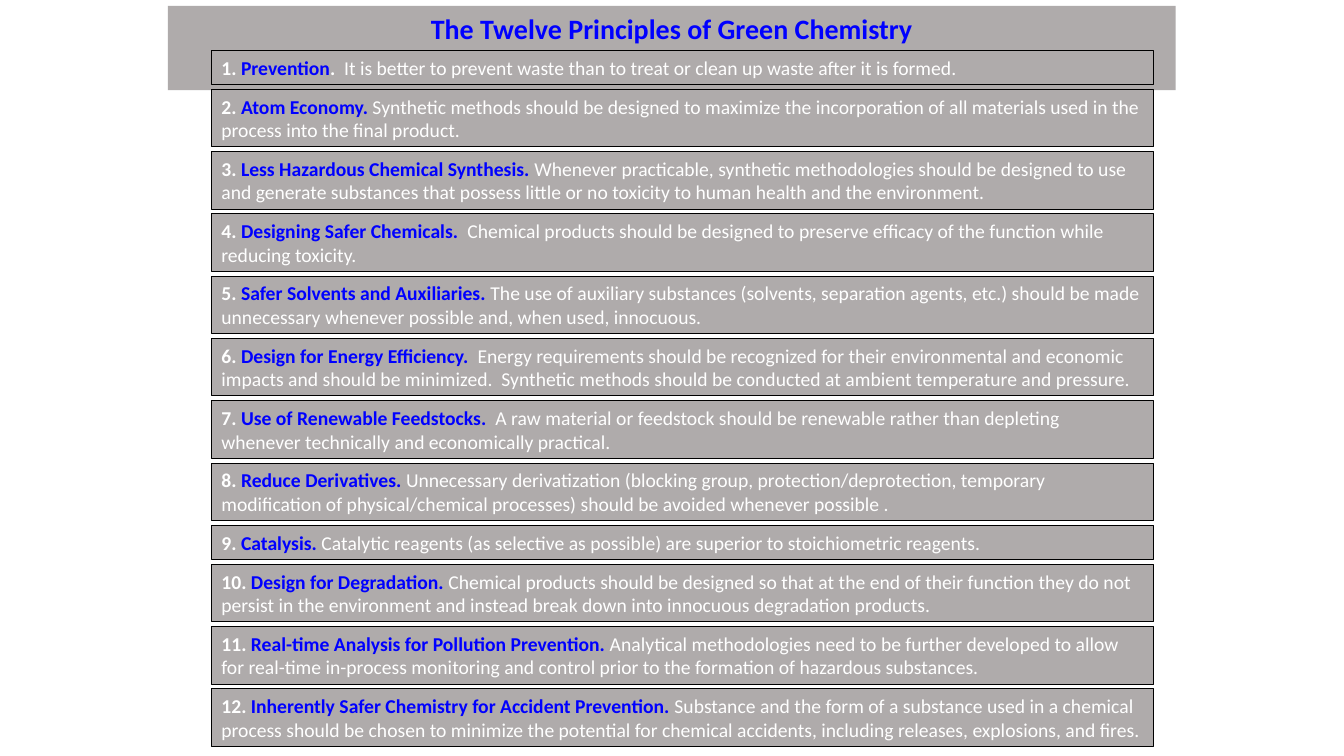
"""Build a slide listing the twelve principles of green chemistry."""
import pptx
import pptx.dml.color
import pptx.enum.text
import pptx.util

Cm = pptx.util.Cm
Pt = pptx.util.Pt
RGBColor = pptx.dml.color.RGBColor

HEADING = "The Twelve Principles of Green Chemistry"
PRINCIPLES = [
    (1, "Prevention", ".", "  It is better to prevent waste than to treat or clean up waste after it is formed."),
    (2, "Atom Economy.", "", " Synthetic methods should be designed to maximize the incorporation of all "
     "materials used in the process into the final product."),
    (2, "Less Hazardous Chemical Synthesis.", "", " Whenever practicable, synthetic methodologies should be "
     "designed to use and generate substances that possess little or no toxicity to human health and the "
     "environment."),
    (2, "Designing Safer Chemicals.  ", "", "Chemical products should be designed to preserve efficacy of the "
     "function while reducing toxicity."),
    (2, "Safer Solvents and Auxiliaries. ", "", "The use of auxiliary substances (solvents, separation agents, "
     "etc.) should be made unnecessary whenever possible and, when used, innocuous."),
    (2, "Design for Energy Efficiency.  ", "", "Energy requirements should be recognized for their environmental "
     "and economic impacts and should be minimized.  Synthetic methods should be conducted at ambient temperature "
     "and pressure."),
    (2, "Use of Renewable Feedstocks.  ", "", "A raw material or feedstock should be renewable rather than "
     "depleting whenever technically and economically practical."),
    (2, "Reduce Derivatives. ", "", "Unnecessary derivatization (blocking group, protection/deprotection, "
     "temporary modification of physical/chemical processes) should be avoided whenever possible ."),
    (1, "Catalysis. ", "", "Catalytic reagents (as selective as possible) are superior to stoichiometric reagents."),
    (2, "Design for Degradation. ", "", "Chemical products should be designed so that at the end of their function "
     "they do not persist in the environment and instead break down into innocuous degradation products."),
    (2, "Real-time Analysis for Pollution Prevention. ", "", "Analytical methodologies need to be further developed "
     "to allow for real-time in-process monitoring and control prior to the formation of hazardous substances."),
    (2, "Inherently Safer Chemistry for Accident Prevention. ", "", "Substance and the form of a substance used in "
     "a chemical process should be chosen to minimize the potential for chemical accidents, including releases, "
     "explosions, and fires."),
]

GREY = RGBColor(0xAF, 0xAB, 0xAB)
BLUE = RGBColor(0x00, 0x00, 0xFF)
WHITE = RGBColor(0xFF, 0xFF, 0xFF)
BLACK = RGBColor(0x00, 0x00, 0x00)

HEADING_FONT = {"name": "Calibri", "size": Pt(20), "bold": True}
NAME_FONT = {"name": "Calibri", "size": Pt(14), "bold": True}
RULE_FONT = {**NAME_FONT, "bold": False}
FRAME = {
    "word_wrap": True,
    "auto_size": pptx.enum.text.MSO_AUTO_SIZE.SHAPE_TO_FIT_TEXT,
    "vertical_anchor": pptx.enum.text.MSO_ANCHOR.TOP,
    "margin_left": Cm(0.25), "margin_right": Cm(0.25),
    "margin_top": Cm(0.13), "margin_bottom": Cm(0.13),
}
HEADING_PLACE = {"left": Cm(4.23), "top": Cm(0.15), "width": Cm(25.4), "height": Cm(1.11)}
BOX_LEFT, BOX_WIDTH, FIRST_TOP, GAP = Cm(5.33), Cm(23.75), Cm(1.27), Cm(0.12)
BOX_HEIGHTS = {1: Cm(0.86), 2: Cm(1.45)}


def apply(target, values):
    """Set each named attribute of the target."""
    for attribute, value in values.items():
        setattr(target, attribute, value)


def fill_grey(box):
    """Give a box its grey fill and text frame settings."""
    box.fill.solid()
    box.fill.fore_color.rgb = GREY
    apply(box.text_frame, FRAME)


def add_run(paragraph, text, font, color):
    """Append a formatted run."""
    run = paragraph.add_run()
    run.text = text
    apply(run.font, font)
    run.font.color.rgb = color


def add_principle(slide, number, top, principle):
    """Add one numbered principle and return the top of the next."""
    lines, name, mark, rule = principle
    height = BOX_HEIGHTS[lines]
    box = slide.shapes.add_textbox(BOX_LEFT, top, BOX_WIDTH, height)
    fill_grey(box)
    box.line.color.rgb = BLACK
    box.line.width = Pt(0.75)
    paragraph = box.text_frame.paragraphs[0]
    add_run(paragraph, f"{number}. ", NAME_FONT, WHITE)
    add_run(paragraph, name, NAME_FONT, BLUE)
    if mark:
        add_run(paragraph, mark, NAME_FONT, WHITE)
    add_run(paragraph, rule, RULE_FONT, WHITE)
    return top + height + GAP


def main():
    """Create and save the presentation."""
    deck = pptx.Presentation()
    apply(deck, {"slide_width": Cm(33.87), "slide_height": Cm(19.05)})
    slide = deck.slides.add_slide(deck.slide_layouts[5])
    heading = slide.shapes.title
    apply(heading, HEADING_PLACE)
    fill_grey(heading)
    paragraph = heading.text_frame.paragraphs[0]
    paragraph.alignment = pptx.enum.text.PP_ALIGN.CENTER
    add_run(paragraph, HEADING, HEADING_FONT, BLUE)
    top = FIRST_TOP
    for number, principle in enumerate(PRINCIPLES, 1):
        top = add_principle(slide, number, top, principle)
    deck.save("out.pptx")


if __name__ == "__main__":
    main()
